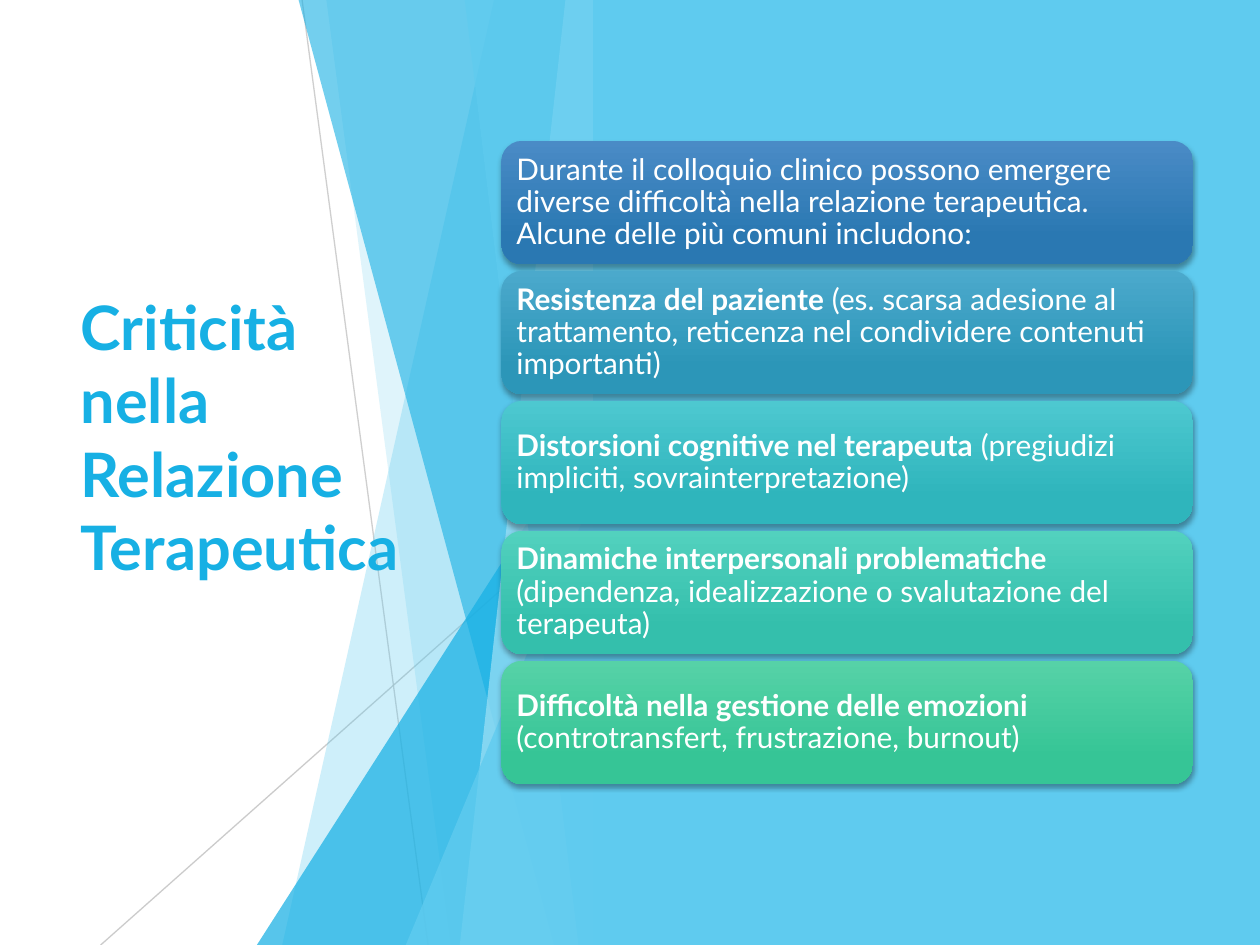
from lxml import etree
from pptx import Presentation
from pptx import util as u
from pptx.dml import color
from pptx.enum import shapes, text
from pptx.oxml import ns

WHITE = color.RGBColor(0xFF, 0xFF, 0xFF)
GREY = color.RGBColor(0xBF, 0xBF, 0xBF)
SKY = color.RGBColor(0x5F, 0xCB, 0xEF)
BLUE = color.RGBColor(0x17, 0xB0, 0xE4)
PALE = color.RGBColor(0x9F, 0xE0, 0xF5)
FONT = "Lato"
SLIDE_W, SLIDE_H = 25.4, 19.05

LINES = [((0.91, 0), (3.45, SLIDE_H), 75), ((6.78, 10.24), (-3.15, SLIDE_H), 80)]
FACETS = [
    ("band", 4.78, 0.51, SKY, 30),
    ("band", 1.4, 3.91, SKY, 20),
    ("triangle", 0, 8.46, BLUE, 72),
    ("band", 0.84, 5.99, BLUE, 60),
    ("band", 6.22, 4.09, PALE, 70),
    ("band", 4.19, 6.48, SKY, 65),
    ("triangle", 3, 9.98, SKY, 80),
]
CARDS = [
    ("", "Durante il colloquio clinico possono emergere diverse difficoltà nella "
     "relazione terapeutica. Alcune delle più comuni includono:", "4A8BC6", "2A78B2"),
    ("Resistenza del paziente", " (es. scarsa adesione al trattamento, reticenza "
     "nel condividere contenuti importanti)", "4BA9CC", "2C96B8"),
    ("Distorsioni cognitive nel terapeuta",
     " (pregiudizi impliciti, sovrainterpretazione)", "4DC8D0", "2FB5BC"),
    ("Dinamiche interpersonali problematiche",
     " (dipendenza, idealizzazione o svalutazione del terapeuta)", "52D1BE", "34BFAC"),
    ("Difficoltà nella gestione delle emozioni",
     " (controtransfert, frustrazione, burnout)", "56D2A7", "36C596"),
]


def apply(obj, formats):
    """Set each attribute of obj from a dict."""
    for name, value in formats.items():
        setattr(obj, name, value)


def child(parent, tag, **attrs):
    """Append a DrawingML child element."""
    return etree.SubElement(parent, ns.qn(tag), attrs)


def set_alpha(sp, percent):
    """Make the solid colour of a shape or line translucent."""
    clr = next(sp._element.spPr.iter(ns.qn("a:srgbClr")))
    child(clr, "a:alpha", val=str(percent * 1000))


def paint(sp, rgb, alpha=100):
    """Give a shape a flat fill without line or shadow."""
    sp.shadow.inherit = False
    sp.fill.solid()
    sp.fill.fore_color.rgb = rgb
    sp.line.fill.background()
    if alpha < 100:
        set_alpha(sp, alpha)


def add_panel(s, x, y, w, h, rgb):
    """Draw a plain rectangle."""
    sp = s.shapes.add_shape(shapes.MSO_SHAPE.RECTANGLE, u.Cm(x), u.Cm(y), u.Cm(w), u.Cm(h))
    paint(sp, rgb)


def add_facets(s, x, y, w, h):
    """Draw the thin lines and translucent facets that share a right edge."""
    for (x1, y1), (x2, y2), alpha in LINES:
        ln = s.shapes.add_connector(shapes.MSO_CONNECTOR.STRAIGHT, u.Cm(x + x1),
                                    u.Cm(y + y1), u.Cm(x + x2), u.Cm(y + y2))
        ln.line.color.rgb = GREY
        ln.line.width = u.Pt(0.75)
        set_alpha(ln, alpha)
        child(ln._element.spPr, "a:effectLst")
    for kind, a, b, rgb, alpha in FACETS:
        if kind == "band":
            fb = s.shapes.build_freeform(u.Cm(x + a), u.Cm(y))
            corners = [(x + w, y), (x + w, y + h), (x + b, y + h)]
            fb.add_line_segments([(u.Cm(cx), u.Cm(cy)) for cx, cy in corners])
            sp = fb.convert_to_shape()
        else:
            sp = s.shapes.add_shape(shapes.MSO_SHAPE.ISOSCELES_TRIANGLE, u.Cm(x + a),
                                    u.Cm(y + b), u.Cm(w - a), u.Cm(h - b))
            sp.adjustments[0] = 1
        paint(sp, rgb, alpha)


def add_title(s, x, y, w, h):
    """Place and format the title above the facets."""
    sp = s.shapes.title
    s.shapes._spTree.append(sp._element)
    apply(sp, dict(left=u.Cm(x), top=u.Cm(y), width=u.Cm(w), height=u.Cm(h)))
    tf = sp.text_frame
    apply(tf, dict(word_wrap=True, auto_size=text.MSO_AUTO_SIZE.NONE,
                   vertical_anchor=text.MSO_ANCHOR.MIDDLE, margin_bottom=u.Cm(1.6)))
    p = tf.paragraphs[0]
    p.alignment = text.PP_ALIGN.LEFT
    r = p.add_run()
    r.text = "Criticità nella Relazione Terapeutica"
    apply(r.font, dict(name=FONT, size=u.Pt(35), bold=True))
    r.font.color.rgb = BLUE


def add_card(s, x, y, w, h, lead, body, top_rgb, low_rgb):
    """Draw one rounded card with a gradient, a soft shadow and its text."""
    sp = s.shapes.add_shape(shapes.MSO_SHAPE.ROUNDED_RECTANGLE,
                            u.Cm(x), u.Cm(y), u.Cm(w), u.Cm(h))
    sp.line.fill.background()
    sp.fill.gradient()
    sp.fill.gradient_angle = 270
    for stop, pos, rgb in zip(sp.fill.gradient_stops, (0, 0.78), (top_rgb, low_rgb)):
        stop.position = pos
        stop.color.rgb = color.RGBColor.from_string(rgb)
    sp.shadow.inherit = False
    effects = sp._element.spPr.find(ns.qn("a:effectLst"))
    shadow = child(effects, "a:outerShdw", blurRad=str(u.Pt(3)), dist=str(u.Pt(2)),
                   dir="5400000", rotWithShape="0")
    child(child(shadow, "a:srgbClr", val="000000"), "a:alpha", val="35000")
    tf = sp.text_frame
    apply(tf, dict(word_wrap=True, vertical_anchor=text.MSO_ANCHOR.MIDDLE))
    apply(tf, {f"margin_{side}": u.Cm(0.18) for side in ("left", "top", "right", "bottom")})
    p = tf.paragraphs[0]
    apply(p, dict(alignment=text.PP_ALIGN.LEFT, line_spacing=0.9))
    for words, bold in ((lead, True), (body, False)):
        if words:
            r = p.add_run()
            r.text = words
            apply(r.font, dict(name=FONT, size=u.Pt(17), bold=bold))
            r.font.color.rgb = WHITE


def add_cards(s, x, y, w, h, gap=0.13):
    """Stack the cards evenly in the given box."""
    card_h = (h - gap * (len(CARDS) - 1)) / len(CARDS)
    for i, card in enumerate(CARDS):
        add_card(s, x, y + i * (card_h + gap), w, card_h, *card)


def main():
    """Build and save the slide."""
    prs = Presentation()
    apply(prs, dict(slide_width=u.Cm(SLIDE_W), slide_height=u.Cm(SLIDE_H)))
    s = prs.slides.add_slide(prs.slide_layouts[5])
    add_panel(s, 0, 0, SLIDE_W, SLIDE_H, WHITE)
    add_facets(s, 5.18, 0, 6.78, SLIDE_H)
    add_title(s, 1.37, 3.84, 7.39, 11.38)
    add_panel(s, 11.96, 0, SLIDE_W - 11.96, SLIDE_H, SKY)
    add_cards(s, 10.11, 2.84, 13.94, 12.97)
    prs.save("out.pptx")


if __name__ == "__main__":
    main()
